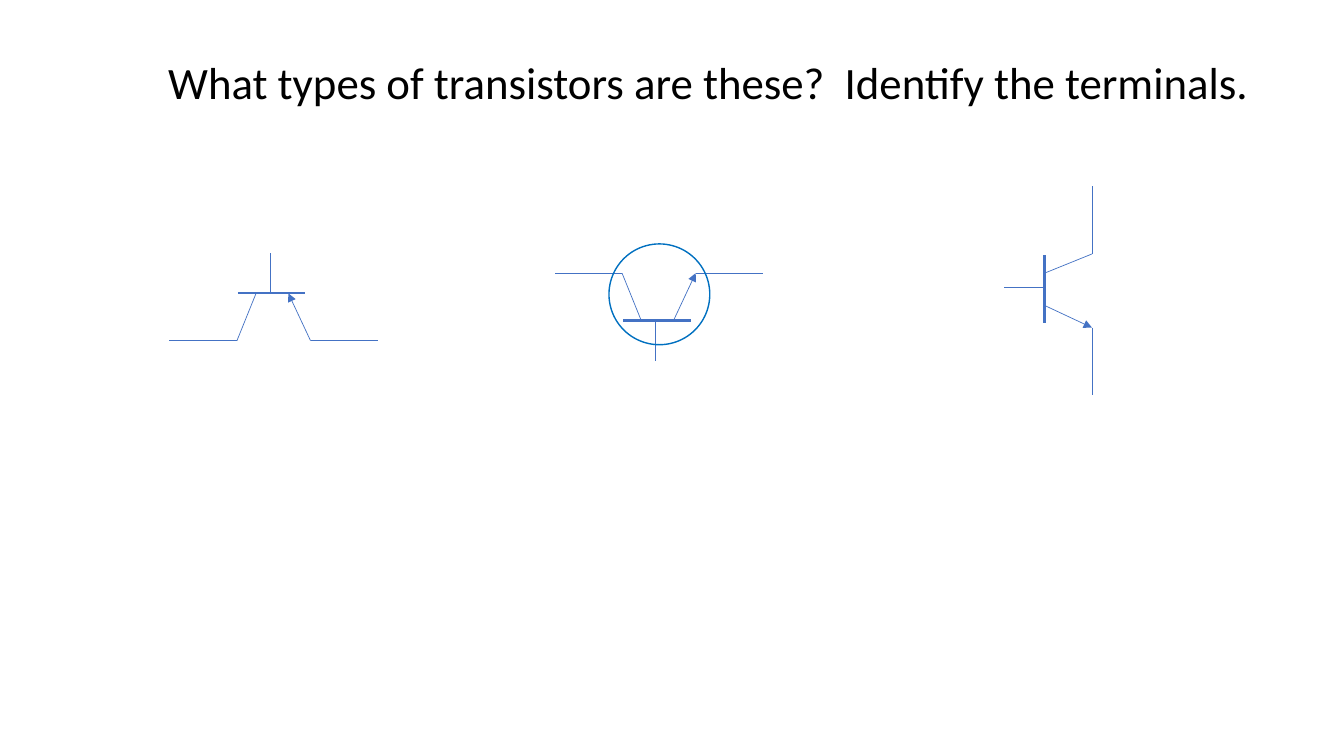
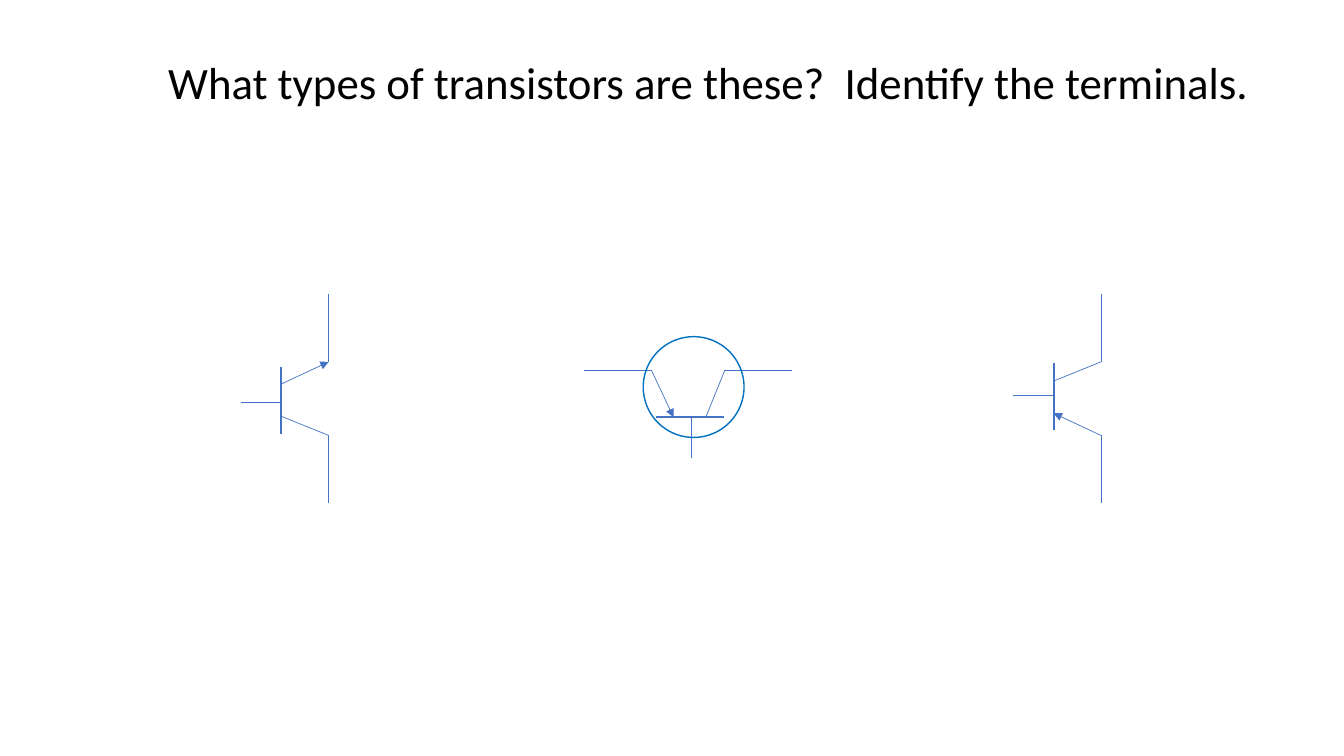
from dataclasses import dataclass

from lxml.etree import SubElement
from pptx import Presentation
from pptx.dml.color import RGBColor as Color
from pptx.enum.shapes import MSO_CONNECTOR as Connector, MSO_SHAPE as Shape
from pptx.enum.text import MSO_ANCHOR as Anchor
from pptx.oxml.ns import qn
from pptx.util import Inches, Pt

RIGHT, LEFT, DOWN, UP = (1, 0), (-1, 0), (0, 1), (0, -1)
QUESTION = "What types of transistors are these?  Identify the terminals."
SLIDES = [
    [
        dict(base=(2.68, 2.91), emitter=RIGHT, leads=DOWN, kind="PNP"),
        dict(base=(6.5, 3.18), emitter=RIGHT, leads=UP, kind="NPN", circle=(6.54, 2.92)),
        dict(base=(10.36, 2.85), emitter=DOWN, leads=RIGHT, kind="NPN"),
    ],
    [
        dict(base=(6.86, 4.14), emitter=LEFT, leads=UP, kind="PNP", circle=(6.88, 3.84)),
        dict(base=(10.45, 3.92), emitter=DOWN, leads=RIGHT, kind="PNP"),
        dict(base=(2.79, 3.99), emitter=UP, leads=RIGHT, kind="NPN"),
    ],
]


@dataclass(frozen=True)
class Theme:
    font: str = "Calibri"
    text: Color = Color(0x00, 0x00, 0x00)
    wire: Color = Color(0x44, 0x72, 0xC4)
    ring: Color = Color(0x00, 0x70, 0xC0)
    title_size: float = 32
    wire_width: float = 0.5
    bar_width: float = 1.5
    ring_width: float = 1


def write_text(box, text, *, font, size, color, spacing=1.0, anchor=Anchor.TOP):
    frame = box.text_frame
    frame.word_wrap = True
    frame.vertical_anchor = anchor
    para = frame.paragraphs[0]
    para.line_spacing = spacing
    span = para.add_run()
    span.text = text
    span.font.name = font
    span.font.size = Pt(size)
    span.font.color.rgb = color


class Quiz:
    """Draws transistor quiz slides in one shared style."""

    def __init__(self, theme):
        self.theme = theme
        self.deck = Presentation()
        self.deck.slide_width = Inches(13.33)
        self.deck.slide_height = Inches(7.5)
        self.page = None

    def add_page(self, title):
        self.page = self.deck.slides.add_slide(self.deck.slide_layouts[6])
        box = self.page.shapes.add_textbox(
            Inches(1.57), Inches(0.37), Inches(11.1), Inches(0.95))
        write_text(box, title, font=self.theme.font, size=self.theme.title_size,
                   color=self.theme.text, spacing=0.9, anchor=Anchor.MIDDLE)

    def wire(self, shapes, start, end, width=None, arrow=False):
        line = shapes.add_connector(
            Connector.STRAIGHT, *(Inches(value) for value in (*start, *end)))
        line.line.color.rgb = self.theme.wire
        line.line.width = Pt(width or self.theme.wire_width)
        if arrow:
            SubElement(line.line._get_or_add_ln(), qn("a:tailEnd"), type="triangle")
        SubElement(line._element.spPr, qn("a:effectLst"))

    def ring(self, center, size=1):
        left, top = (value - size / 2 for value in center)
        ring = self.page.shapes.add_shape(
            Shape.OVAL, Inches(left), Inches(top), Inches(size), Inches(size))
        ring.shadow.inherit = False
        ring.fill.background()
        ring.line.color.rgb = self.theme.ring
        ring.line.width = Pt(self.theme.ring_width)

    def transistor(self, base, emitter, leads, kind, circle=None):
        def at(along, out):
            return [origin + along * side + out * lead
                    for origin, side, lead in zip(base, emitter, leads)]

        shapes = self.page.shapes.add_group_shape().shapes
        contact, corner = at(0.18, 0), at(0.4, 0.47)
        start, end = (contact, corner) if kind == "NPN" else (corner, contact)
        self.wire(shapes, corner, at(1.07, 0.47))
        self.wire(shapes, at(-0.33, 0.47), at(-1, 0.47))
        self.wire(shapes, at(-0.32, 0), at(0.35, 0), width=self.theme.bar_width)
        self.wire(shapes, start, end, arrow=True)
        self.wire(shapes, at(-0.14, 0), at(-0.33, 0.47))
        self.wire(shapes, at(0, 0), at(0, -0.4))
        if circle:
            self.ring(circle)


def main():
    quiz = Quiz(Theme())
    for transistors in SLIDES:
        quiz.add_page(QUESTION)
        for transistor in transistors:
            quiz.transistor(**transistor)
    quiz.deck.save("out.pptx")


if __name__ == "__main__":
    main()
